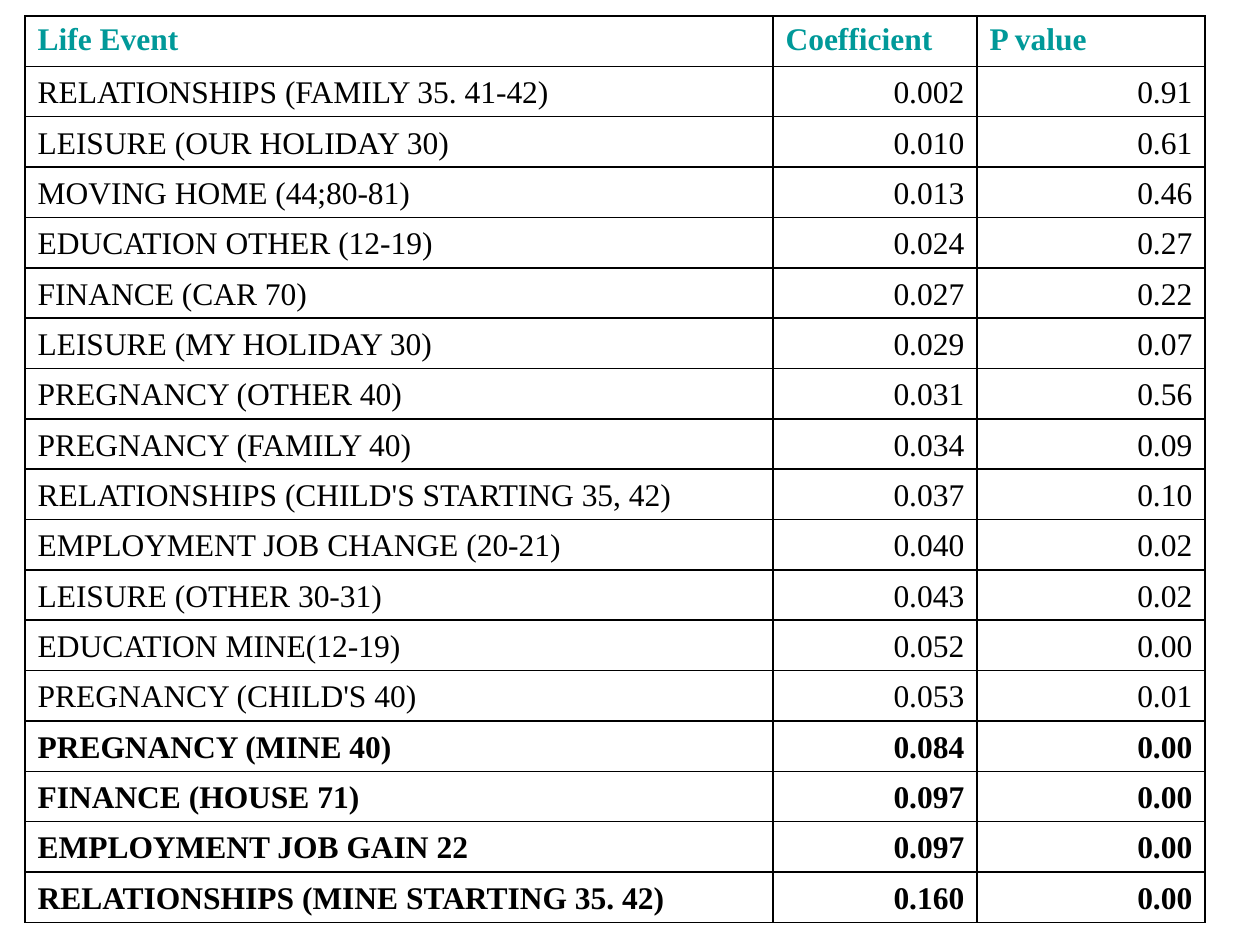
from lxml.etree import SubElement
from pptx import Presentation
from pptx.dml.color import RGBColor
from pptx.enum.text import MSO_ANCHOR, PP_ALIGN
from pptx.oxml.ns import qn
from pptx.util import Emu, Pt


def px(n):
    return Emu(round(n * 914400 / 126))


def add_borders(cell, color="000000"):
    tcPr = cell._tc.get_or_add_tcPr()
    for side in ("lnL", "lnR", "lnT", "lnB"):
        ln = SubElement(tcPr, qn(f"a:{side}"), w=str(Pt(1)))
        fill = SubElement(ln, qn("a:solidFill"))
        SubElement(fill, qn("a:srgbClr"), val=color)


HEADER = ("Life Event", "Coefficient", "P value")
EVENTS = [
    ("RELATIONSHIPS (FAMILY 35. 41-42)", "0.002", "0.91"),
    ("LEISURE (OUR HOLIDAY 30)", "0.010", "0.61"),
    ("MOVING HOME (44;80-81)", "0.013", "0.46"),
    ("EDUCATION OTHER (12-19)", "0.024", "0.27"),
    ("FINANCE (CAR 70)", "0.027", "0.22"),
    ("LEISURE (MY HOLIDAY 30)", "0.029", "0.07"),
    ("PREGNANCY (OTHER 40)", "0.031", "0.56"),
    ("PREGNANCY (FAMILY 40)", "0.034", "0.09"),
    ("RELATIONSHIPS (CHILD'S STARTING 35, 42)", "0.037", "0.10"),
    ("EMPLOYMENT JOB CHANGE (20-21)", "0.040", "0.02"),
    ("LEISURE (OTHER 30-31)", "0.043", "0.02"),
    ("EDUCATION MINE(12-19)", "0.052", "0.00"),
    ("PREGNANCY (CHILD'S 40)", "0.053", "0.01"),
    ("PREGNANCY (MINE 40)", "0.084", "0.00"),
    ("FINANCE (HOUSE 71)", "0.097", "0.00"),
    ("EMPLOYMENT JOB GAIN 22", "0.097", "0.00"),
    ("RELATIONSHIPS (MINE STARTING 35. 42)", "0.160", "0.00"),
]
COL_WIDTHS = (748, 204, 228)
TABLE_HEIGHT = 907
FIRST_BOLD_ROW = 14

prs = Presentation()
prs.slide_width, prs.slide_height = px(1260), px(945)
s = prs.slides.add_slide(prs.slide_layouts[6])

rows = [HEADER, *EVENTS]
table = s.shapes.add_table(len(rows), len(HEADER), px(25), px(16),
                           px(sum(COL_WIDTHS)), px(TABLE_HEIGHT)).table
table.first_row = table.horz_banding = False
for column, width in zip(table.columns, COL_WIDTHS):
    column.width = px(width)

for i, values in enumerate(rows):
    is_header = i == 0
    for j, value in enumerate(values):
        cell = table.cell(i, j)
        add_borders(cell)
        cell.fill.background()
        cell.vertical_anchor = MSO_ANCHOR.TOP if is_header else MSO_ANCHOR.BOTTOM
        cell.text = value
        p = cell.text_frame.paragraphs[0]
        p.alignment = PP_ALIGN.LEFT if is_header or j == 0 else PP_ALIGN.RIGHT
        p.font.name = "Times New Roman"
        p.font.size = Pt(18)
        p.font.bold = is_header or i >= FIRST_BOLD_ROW
        p.font.color.rgb = RGBColor.from_string("009999" if is_header else "000000")

prs.save("out.pptx")
